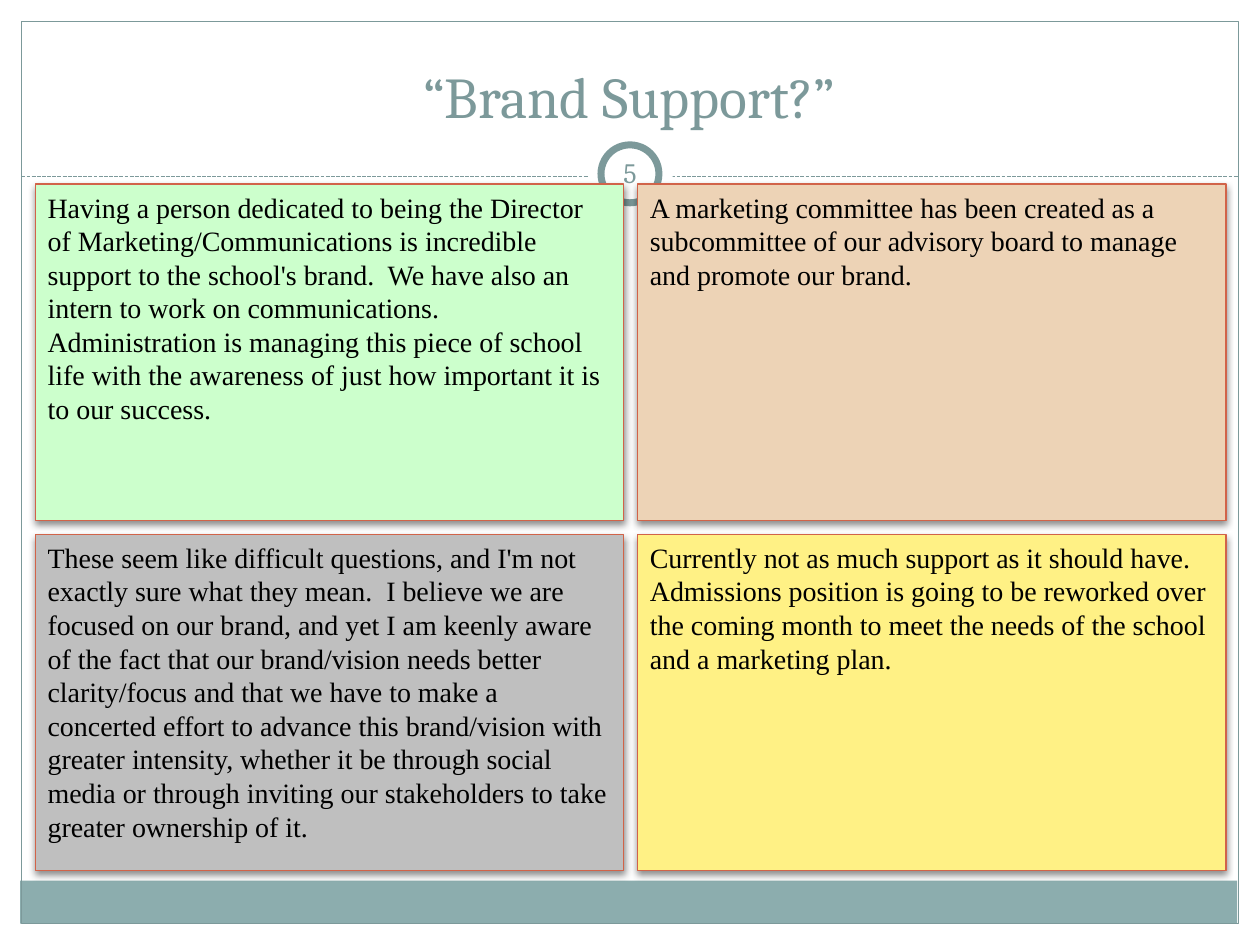
from dataclasses import dataclass

from lxml.etree import SubElement
from pptx import Presentation
from pptx.dml.color import RGBColor
from pptx.enum.dml import MSO_LINE
from pptx.enum.shapes import MSO_CONNECTOR, MSO_SHAPE as Shape
from pptx.enum.text import MSO_ANCHOR as Anchor, PP_ALIGN as Align
from pptx.oxml.ns import qn
from pptx.util import Inches, Pt


@dataclass(frozen=True)
class Theme:
    teal: str = "7C999A"
    band: str = "8CADAE"
    edge: str = "D16349"
    ink: str = "000000"
    white: str = "FFFFFF"
    head: str = "Cambria"
    body: str = "Times New Roman"
    big: int = 33
    small: int = 16
    thin: float = 0.75


THEME = Theme()

QUOTES = [
    ("CCFFCC", "Having a person dedicated to being the Director of "
     "Marketing/Communications is incredible support to the school's brand.  "
     "We have also an intern to work on communications.  Administration is "
     "managing this piece of school life with the awareness of just how "
     "important it is to our success."),
    ("EDD3B6", "A marketing committee has been created as a subcommittee of our "
     "advisory board to manage and promote our brand."),
    ("BFBFBF", "These seem like difficult questions, and I'm not exactly sure "
     "what they mean.  I believe we are focused on our brand, and yet I am "
     "keenly aware of the fact that our brand/vision needs better clarity/focus "
     "and that we have to make a concerted effort to advance this brand/vision "
     "with greater intensity, whether it be through social media or through "
     "inviting our stakeholders to take greater ownership of it."),
    ("FFF185", "Currently not as much support as it should have.  Admissions "
     "position is going to be reworked over the coming month to meet the needs "
     "of the school and a marketing plan."),
]


def color(code):
    return RGBColor.from_string(code)


def add_form(slide, kind, box, fill=None, line=None, width=THEME.thin):
    form = slide.shapes.add_shape(kind, *map(Inches, box))
    form.shadow.inherit = False
    if fill:
        form.fill.solid()
        form.fill.fore_color.rgb = color(fill)
    else:
        form.fill.background()
    if line:
        form.line.color.rgb = color(line)
        form.line.width = Pt(width)
    else:
        form.line.fill.background()
    return form


def set_text(form, text, font, size, ink, align=Align.LEFT, anchor=Anchor.TOP):
    frame = form.text_frame
    frame.word_wrap = True
    frame.vertical_anchor = anchor
    frame.text = text
    para = frame.paragraphs[0]
    para.alignment = align
    face = para.runs[0].font
    face.name, face.size = font, Pt(size)
    face.color.rgb = color(ink)


def add_label(slide, box, text, size, anchor, inset=None):
    """Add centred teal heading text."""
    label = slide.shapes.add_textbox(*map(Inches, box))
    set_text(label, text, THEME.head, size, THEME.teal, Align.CENTER, anchor)
    if inset is not None:
        frame = label.text_frame
        frame.margin_left = frame.margin_right = Inches(inset)
        frame.margin_top = frame.margin_bottom = Inches(inset)


def add_shadow(form):
    effects = form._element.spPr.find(qn("a:effectLst"))
    shade = SubElement(effects, qn("a:outerShdw"), blurRad=str(Pt(4)),
                       dist=str(Pt(2)), dir="5400000", rotWithShape="0")
    tint = SubElement(shade, qn("a:srgbClr"), val=THEME.ink)
    SubElement(tint, qn("a:alpha"), val="45000")


def add_rule(slide, left, right, top):
    rule = slide.shapes.add_connector(
        MSO_CONNECTOR.STRAIGHT, *map(Inches, (left, top, right, top)))
    rule.line.color.rgb = color(THEME.teal)
    rule.line.width = Pt(THEME.thin)
    rule.line.dash_style = MSO_LINE.SQUARE_DOT
    SubElement(rule._element.spPr, qn("a:effectLst"))


def add_frame(slide):
    add_form(slide, Shape.RECTANGLE, (0.16, 6.99, 9.66, 0.34), THEME.band)
    add_form(slide, Shape.RECTANGLE, (0.17, 0.17, 9.66, 7.16), line=THEME.teal)
    add_rule(slide, 0.17, 9.83, 1.4)
    add_form(slide, Shape.OVAL, (4.67, 1.05, 0.67, 0.67), THEME.white)
    add_form(slide, Shape.OVAL, (4.77, 1.15, 0.46, 0.46), THEME.white,
             THEME.teal, 4)


def add_quotes(slide):
    """Place the quotes in a grid of two columns."""
    wide, high = 4.67, 2.67
    for i, (fill, text) in enumerate(QUOTES):
        row, col = divmod(i, 2)
        box = (0.28 + col * 4.78, 1.46 + row * 2.78, wide, high)
        card = add_form(slide, Shape.RECTANGLE, box, fill, THEME.edge)
        add_shadow(card)
        set_text(card, text, THEME.body, THEME.small, THEME.ink)


def main():
    deck = Presentation()
    deck.slide_width, deck.slide_height = Inches(10), Inches(7.5)
    slide = deck.slides.add_slide(deck.slide_layouts[6])
    add_frame(slide)
    add_label(slide, (0.33, 0.25, 9.33, 0.83), "“Brand Support?”",
              THEME.big, Anchor.BOTTOM)
    add_quotes(slide)
    add_label(slide, (4.75, 1.13, 0.5, 0.48), "5", THEME.small,
              Anchor.MIDDLE, 0.05)
    deck.save("out.pptx")


if __name__ == "__main__":
    main()
